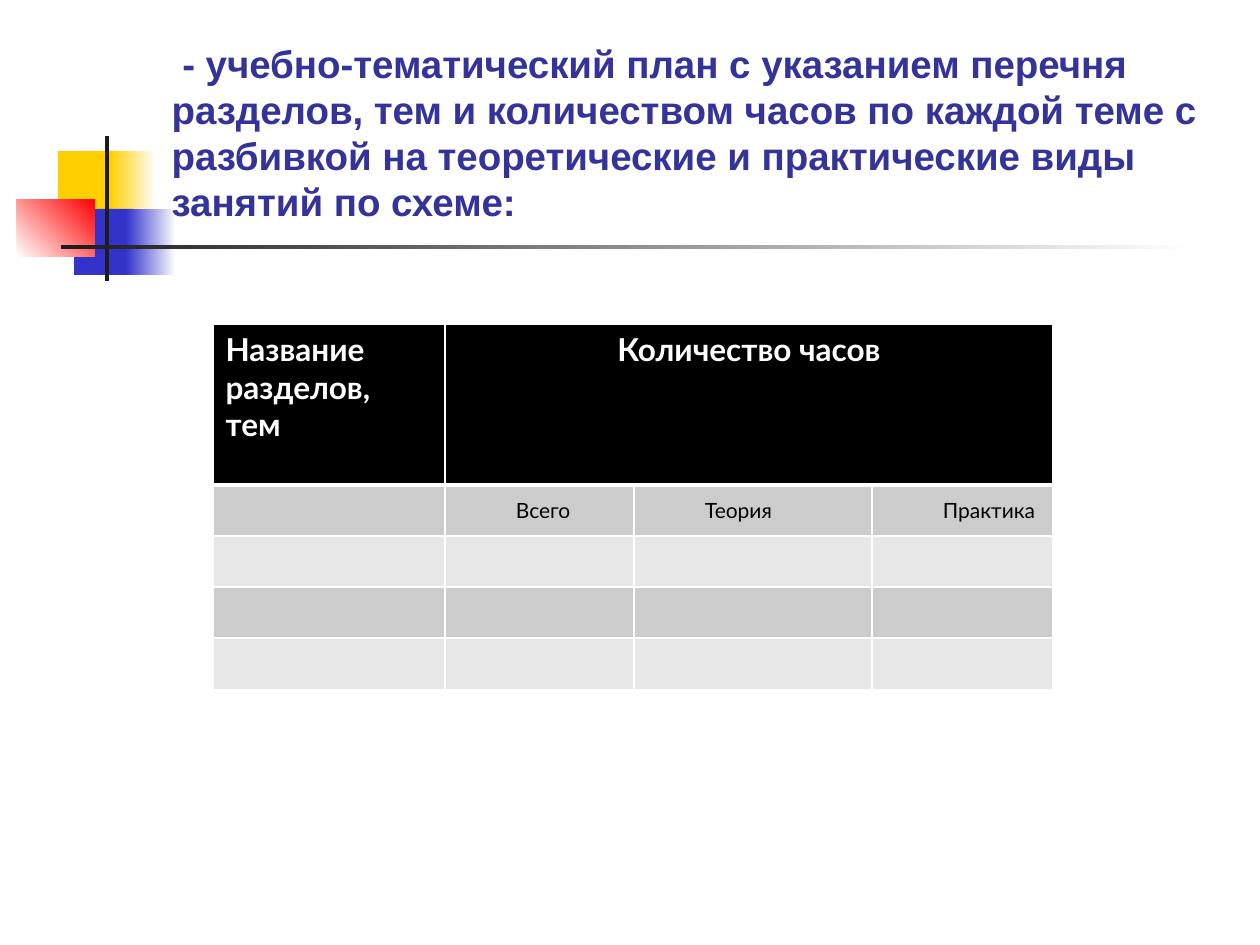
from lxml.etree import SubElement
from pptx import Presentation
from pptx.dml.color import RGBColor
from pptx.enum.shapes import MSO_SHAPE
from pptx.enum.text import MSO_ANCHOR, PP_ALIGN as Align
from pptx.oxml.ns import qn
from pptx.util import Emu, Pt

PX = 914400 / 126
WHITE = RGBColor(0xFF, 0xFF, 0xFF)
BLACK = RGBColor(0, 0, 0)
YELLOW = RGBColor(0xFF, 0xCF, 0x01)
BLUE = RGBColor(0x33, 0x33, 0xCC)
RED = RGBColor(0xFF, 0, 0)
CHARCOAL = RGBColor(0x1C, 0x1C, 0x1C)
NAVY = RGBColor(0x33, 0x33, 0x99)
DARK_BAND = RGBColor(0xCC, 0xCC, 0xCC)
LIGHT_BAND = RGBColor(0xE7, 0xE7, 0xE7)

HEADING = (
    " - учебно-тематический план с указанием перечня разделов, тем и количеством "
    "часов по каждой теме с разбивкой на теоретические и практические виды "
    "занятий по схеме:"
)
COLUMN_WIDTHS = [232, 189, 238, 181]
ROW_HEIGHTS = [161, 49, 50, 49, 49]
HOUR_KINDS = ["Всего", "Теория", "Практика"]


def px(length):
    return Emu(round(length * PX))


def write(frame, text, size, color, font="Lato", bold=False, align=Align.LEFT,
          indent=0, spacing=1.0):
    paragraph = frame.paragraphs[0]
    paragraph.alignment = align
    paragraph.line_spacing = spacing
    if indent:
        paragraph._p.get_or_add_pPr().set("indent", str(px(indent)))
    run = paragraph.add_run()
    run.text = text
    run.font.name = font
    run.font.size = Pt(size)
    run.font.bold = bold
    run.font.color.rgb = color


def add_block(slide, left, top, width, height, start, end=None, angle=0):
    block = slide.shapes.add_shape(
        MSO_SHAPE.RECTANGLE, px(left), px(top), px(width), px(height))
    block.shadow.inherit = False
    block.line.fill.background()
    if end is None:
        block.fill.solid()
        block.fill.fore_color.rgb = start
        return
    block.fill.gradient()
    block.fill.gradient_angle = angle
    for stop, color in zip(block.fill.gradient_stops, (start, end)):
        stop.color.rgb = color


def add_emblem(slide, left, top):
    blocks = [
        (41, 15, 60, 66, YELLOW),
        (93, 15, 46, 66, YELLOW, WHITE),
        (57, 73, 59, 66, BLUE),
        (109, 73, 50, 66, BLUE, WHITE),
        (0, 63, 78, 58, WHITE, RED, 45),
        (88, 0, 4, 145, CHARCOAL),
        (44, 109, 1134, 4, CHARCOAL, WHITE),
    ]
    for x, y, *look in blocks:
        add_block(slide, left + x, top + y, *look)


def add_heading(slide, left, top, width, height):
    heading = slide.shapes.title
    heading.left, heading.top = px(left), px(top)
    heading.width, heading.height = px(width), px(height)
    slide.shapes.element.append(heading.element)
    frame = heading.text_frame
    frame.word_wrap = True
    frame.vertical_anchor = MSO_ANCHOR.BOTTOM
    write(frame, HEADING, 22, NAVY, font="Arial", bold=True)


def style_cell(cell, color, top=1, bottom=1):
    properties = cell._tc.get_or_add_tcPr()
    for side, width in (("L", 1), ("R", 1), ("T", top), ("B", bottom)):
        border = SubElement(properties, qn(f"a:ln{side}"), w=str(Pt(width)))
        fill = SubElement(border, qn("a:solidFill"))
        SubElement(fill, qn("a:srgbClr"), val=str(WHITE))
    cell.fill.solid()
    cell.fill.fore_color.rgb = color


def add_hours_table(slide, left, top):
    hours = slide.shapes.add_table(
        len(ROW_HEIGHTS), len(COLUMN_WIDTHS), px(left), px(top),
        px(sum(COLUMN_WIDTHS)), px(sum(ROW_HEIGHTS))).table
    for column, width in zip(hours.columns, COLUMN_WIDTHS):
        column.width = px(width)
    for index, (row, height) in enumerate(zip(hours.rows, ROW_HEIGHTS)):
        row.height = px(height)
        for cell in row.cells:
            if index == 0:
                style_cell(cell, BLACK, bottom=3)
            else:
                band = DARK_BAND if index % 2 else LIGHT_BAND
                style_cell(cell, band, top=3 if index == 1 else 1)

    hours.cell(0, 1).merge(hours.cell(0, 3))
    write(hours.cell(0, 0).text_frame, "Название разделов, тем", 18, WHITE, bold=True)
    write(hours.cell(0, 1).text_frame, "Количество часов", 18, WHITE, bold=True,
          align=Align.CENTER)
    for column, kind in enumerate(HOUR_KINDS, start=1):
        cell = hours.cell(1, column)
        cell.margin_left = cell.margin_right = px(9)
        cell.margin_top = cell.margin_bottom = 0
        write(cell.text_frame, kind, 12, BLACK, align=Align.JUSTIFY,
              indent=62, spacing=1.5)


def main():
    deck = Presentation()
    deck.slide_width, deck.slide_height = px(1260), px(945)
    slide = deck.slides.add_slide(deck.slide_layouts[5])
    add_emblem(slide, 17, 136)
    add_heading(slide, 159, 29, 1074, 202)
    add_hours_table(slide, 213, 324)
    deck.save("out.pptx")


if __name__ == "__main__":
    main()
